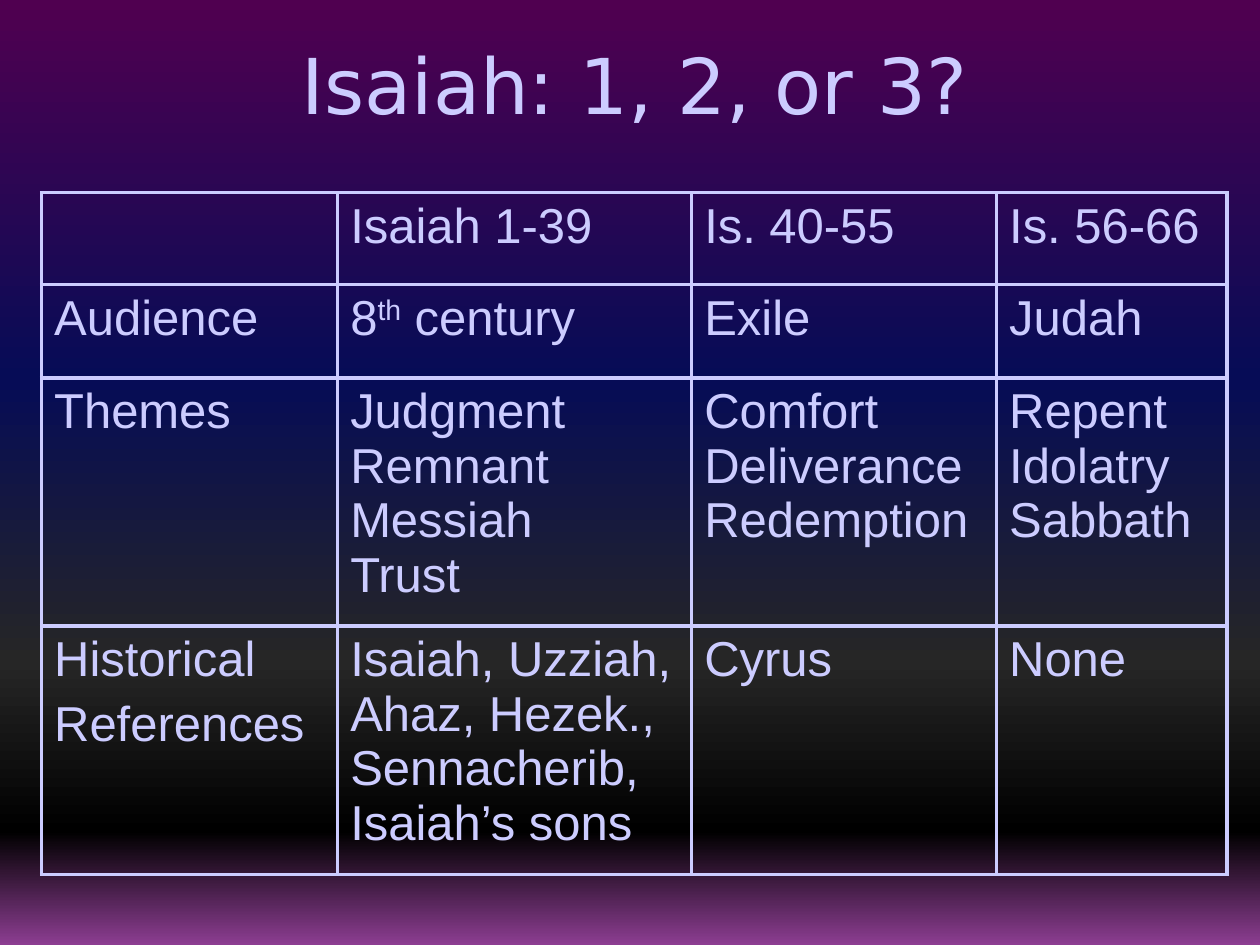
from copy import deepcopy
from dataclasses import dataclass

from lxml.etree import SubElement as Sub
from pptx import Presentation
from pptx.dml.color import RGBColor as Rgb
from pptx.enum.text import MSO_ANCHOR as Anchor, PP_ALIGN as Align
from pptx.oxml.ns import qn
from pptx.util import Inches, Pt

TITLE = "Isaiah: 1, 2, or 3?"
# A list is one paragraph per item; text between carets is superscript.
ROWS = [
    ["", "Isaiah 1-39", "Is. 40-55", "Is. 56-66"],
    ["Audience", "8^th^ century", "Exile", "Judah"],
    ["Themes",
     ["Judgment", "Remnant", "Messiah", "Trust"],
     ["Comfort", "Deliverance", "Redemption"],
     ["Repent", "Idolatry", "Sabbath"]],
    [["Historical", "References"],
     "Isaiah, Uzziah, Ahaz, Hezek., Sennacherib, Isaiah’s sons",
     "Cyrus", "None"],
]
WIDTHS = [2.35, 2.81, 2.42, 1.83]
HEIGHTS = [0.73, 0.74, 1.97, 1.97]


@dataclass(frozen=True)
class Theme:
    ink: str = "CCCCFF"
    head: str = "DejaVu Sans"
    body: str = "Arial"
    head_size: int = 44
    body_size: int = 28
    line: float = 2.25
    sky: tuple = ((0, "500050"), (40, "060C56"), (70, "262626"),
                  (88, "000000"), (100, "8C3D91"))


THEME = Theme()


def write(frame, text, font=THEME.body, size=THEME.body_size,
          align=Align.LEFT, gap=0):
    """Fill a frame; gap is the space between paragraphs in points."""
    items = text if isinstance(text, list) else [text]
    for i, item in enumerate(items):
        para = frame.add_paragraph() if i else frame.paragraphs[0]
        para.alignment = align
        para.space_before = Pt(gap if i else 0)
        for j, part in enumerate(item.split("^")):
            if not part:
                continue
            run = para.add_run()
            run.text = part
            run.font.name, run.font.size = font, Pt(size)
            run.font.color.rgb = Rgb.from_string(THEME.ink)
            if j % 2:
                run.font._element.set("baseline", "30000")


def paint(slide):
    """Give the slide its vertical gradient of many stops."""
    fill = slide.background.fill
    fill.gradient()
    fill.gradient_angle = 270
    stops = slide._element.find(".//" + qn("a:gsLst"))
    for _ in THEME.sky[2:]:
        stops.append(deepcopy(stops[0]))
    for stop, (pos, tint) in zip(fill.gradient_stops, THEME.sky):
        stop.position = pos / 100
        stop.color.rgb = Rgb.from_string(tint)


def frame_cell(cell):
    """Draw all four borders and leave the cell clear."""
    props = cell._tc.get_or_add_tcPr()
    for side in "LRTB":
        line = Sub(props, qn("a:ln" + side), w=str(Pt(THEME.line)))
        solid = Sub(line, qn("a:solidFill"))
        Sub(solid, qn("a:srgbClr"), val=THEME.ink)
    cell.fill.background()


def add_grid(slide, left, top):
    shape = slide.shapes.add_table(
        len(ROWS), len(WIDTHS), left, top,
        Inches(sum(WIDTHS)), Inches(sum(HEIGHTS)))
    table = shape.table
    table.first_row = table.horz_banding = False
    for col, width in zip(table.columns, WIDTHS):
        col.width = Inches(width)
    for row, height, texts in zip(table.rows, HEIGHTS, ROWS):
        row.height = Inches(height)
        for i, (cell, text) in enumerate(zip(row.cells, texts)):
            frame_cell(cell)
            gap = 0 if i else THEME.body_size * 0.2
            write(cell.text_frame, text, gap=gap)


def main():
    deck = Presentation()
    deck.slide_width, deck.slide_height = Inches(10), Inches(7.5)
    slide = deck.slides.add_slide(deck.slide_layouts[5])
    paint(slide)
    title = slide.shapes.title
    title.left, title.top = Inches(0.42), Inches(0.25)
    title.width, title.height = Inches(9.25), Inches(0.83)
    title.text_frame.vertical_anchor = Anchor.MIDDLE
    write(title.text_frame, TITLE, font=THEME.head, size=THEME.head_size,
          align=Align.CENTER)
    add_grid(slide, Inches(0.33), Inches(1.53))
    deck.save("out.pptx")


if __name__ == "__main__":
    main()
